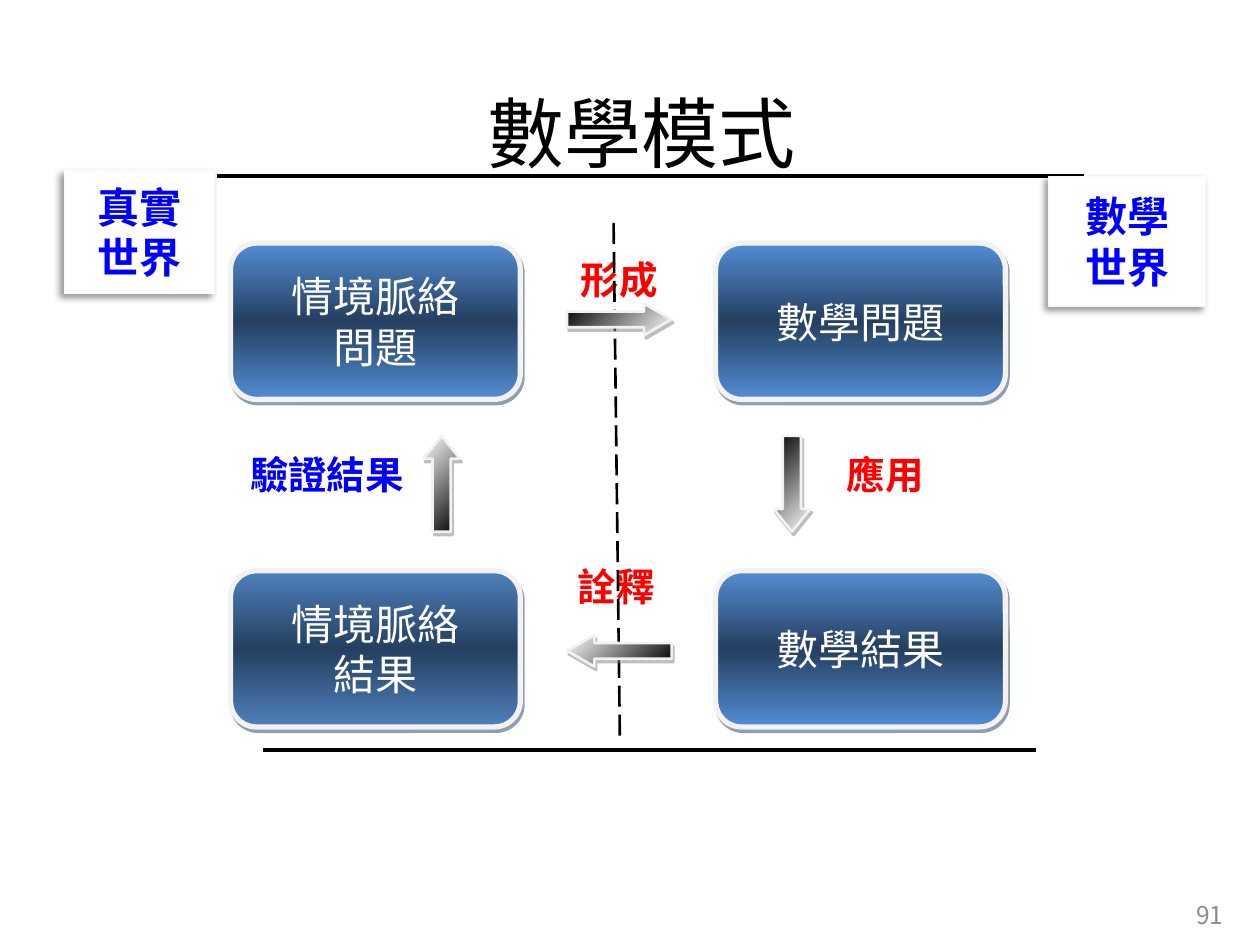
from lxml.etree import SubElement
from pptx import Presentation
from pptx.dml.color import RGBColor
from pptx.enum.dml import MSO_LINE
from pptx.enum.shapes import MSO_CONNECTOR, MSO_SHAPE as SHAPE
from pptx.enum.text import MSO_ANCHOR as ANCHOR, PP_ALIGN as ALIGN
from pptx.oxml import parse_xml
from pptx.oxml.ns import nsdecls, qn
from pptx.util import Inches, Pt

COLORS = {
    "black": "000000", "white": "FFFFFF", "red": "FF0000", "blue": "0000FF",
    "number": "8C8C8C", "rim": "F2F2F2", "card_rim": "F9F9F9",
    "box": "548DD4", "box_alt": "4F81BD", "box_mid": "243F60",
    "arrow_shadow": "7F7F7F",
}
FONT = "Noto Sans CJK SC"


def rgb(name):
    return RGBColor.from_string(COLORS[name])


class ModelSlide:
    """Hold the style and the current slide, and draw each kind of element."""

    def __init__(self, prs):
        self.shapes = prs.slides.add_slide(prs.slide_layouts[6]).shapes

    def set_text(self, s, text, size, color, bold=False, align=ALIGN.CENTER,
                 anchor=ANCHOR.MIDDLE, font=FONT):
        tf = s.text_frame
        tf.word_wrap = True
        tf.vertical_anchor = anchor
        tf.text = text
        for p in tf.paragraphs:
            p.alignment = align
            p.font.size, p.font.bold, p.font.name = Pt(size), bold, font
            p.font.color.rgb = rgb(color)
            ea = SubElement(p.font._element, qn("a:ea"))
            ea.set("typeface", font)
        return tf

    def text(self, box, text, size, color, **style):
        s = self.shapes.add_textbox(*map(Inches, box))
        return self.set_text(s, text, size, color, **style)

    def label(self, box, text, color):
        tf = self.text(box, text, 22, color, bold=True, anchor=ANCHOR.TOP)
        tf.margin_top = tf.margin_bottom = Inches(0.02)

    def line(self, start, end, width, dash=None):
        s = self.shapes.add_connector(
            MSO_CONNECTOR.STRAIGHT, *map(Inches, start + end))
        s.line.color.rgb = rgb("black")
        s.line.width = Pt(width)
        if dash:
            s.line.dash_style = dash
        SubElement(s._element.spPr, qn("a:effectLst"))

    def shape(self, kind, box, rim, width):
        s = self.shapes.add_shape(kind, *map(Inches, box))
        s.fill.solid()
        s.fill.fore_color.rgb = rgb("white")
        s.line.color.rgb = rgb(rim)
        s.line.width = Pt(width)
        return s

    def gradient(self, s, names, angle):
        step = 100000 // (len(names) - 1)
        stops = "".join(
            f'<a:gs pos="{i * step}"><a:srgbClr val="{COLORS[name]}"/></a:gs>'
            for i, name in enumerate(names))
        spPr = s._element.spPr
        spPr.replace(spPr.find(qn("a:solidFill")), parse_xml(
            f'<a:gradFill {nsdecls("a")} rotWithShape="1"><a:gsLst>{stops}</a:gsLst>'
            f'<a:lin ang="{angle * 60000}" scaled="1"/></a:gradFill>'))

    def shadow(self, s, color, alpha=50, blur=0, dist=2.2, angle=63):
        s._element.spPr.append(parse_xml(
            f'<a:effectLst {nsdecls("a")}><a:outerShdw blurRad="{Pt(blur)}" '
            f'dist="{Pt(dist)}" dir="{angle * 60000}" algn="ctr" rotWithShape="0">'
            f'<a:srgbClr val="{COLORS[color]}"><a:alpha val="{alpha * 1000}"/>'
            f'</a:srgbClr></a:outerShdw></a:effectLst>'))

    def box(self, left, top, text, edge="box"):
        s = self.shape(SHAPE.ROUNDED_RECTANGLE, (left, top, 2.3, 1.24), "rim", 3)
        self.gradient(s, (edge, "box_mid", edge), 90)
        self.shadow(s, "box_mid")
        self.set_text(s, text, 24, "white")

    def arrow(self, kind, box, head, rotation=0):
        s = self.shape(kind, box, "rim", 1.5)
        s.adjustments[1] = head
        s.rotation = rotation
        self.gradient(s, ("black", "white"), 45)
        self.shadow(s, "arrow_shadow")

    def card(self, box, text):
        s = self.shape(SHAPE.RECTANGLE, box, "card_rim", 0.75)
        self.shadow(s, "black", 40, 4, 3, 135)
        self.set_text(s, text, 24, "blue", bold=True)


def main():
    prs = Presentation()
    prs.slide_width, prs.slide_height = Inches(10), Inches(7.5)
    slide = ModelSlide(prs)

    slide.text((0.59, 0.29, 9, 1.17), "數學模式", 44, "black",
               anchor=ANCHOR.BOTTOM, font="Comic Neue")
    slide.text((7.48, 6.98, 2.33, 0.56), "91", 14, "number", align=ALIGN.RIGHT)

    for box, text, color in (
        ((6.02, 3.56, 2.01, 0.35), "應用", "red"),
        ((1.8, 3.56, 1.59, 0.35), "驗證結果", "blue"),
        ((4.13, 4.45, 1.52, 0.58), "詮釋", "red"),
        ((4.12, 2.01, 1.59, 0.48), "形成", "red"),
    ):
        slide.label(box, text, color)

    slide.line((2.09, 5.95), (8.22, 5.95), 2.25)
    slide.line((4.87, 1.77), (4.92, 5.88), 1.5, MSO_LINE.LONG_DASH)

    left, right, top, bottom = 1.83, 5.68, 1.93, 4.53
    slide.box(right, bottom, "數學結果")
    slide.box(left, top, "情境脈絡\v問題")
    slide.box(right, top, "數學問題")
    slide.box(left, bottom, "情境脈絡\v結果", "box_alt")

    for y, rotation in ((2.41, 0), (5.04, 180)):
        slide.arrow(SHAPE.RIGHT_ARROW, (4.5, y, 0.83, 0.25), 0.87, rotation)
    for x, rotation in ((6.14, 0), (3.36, 180)):
        slide.arrow(SHAPE.DOWN_ARROW, (x, 3.46, 0.29, 0.76), 0.62, rotation)

    slide.line((1.72, 1.4), (8.6, 1.4), 2.25)
    slide.card((0.51, 1.35, 1.19, 0.98), "真實\n世界")
    slide.card((8.32, 1.4, 1.25, 1.03), "數學\n世界")

    prs.save("out.pptx")


if __name__ == "__main__":
    main()
